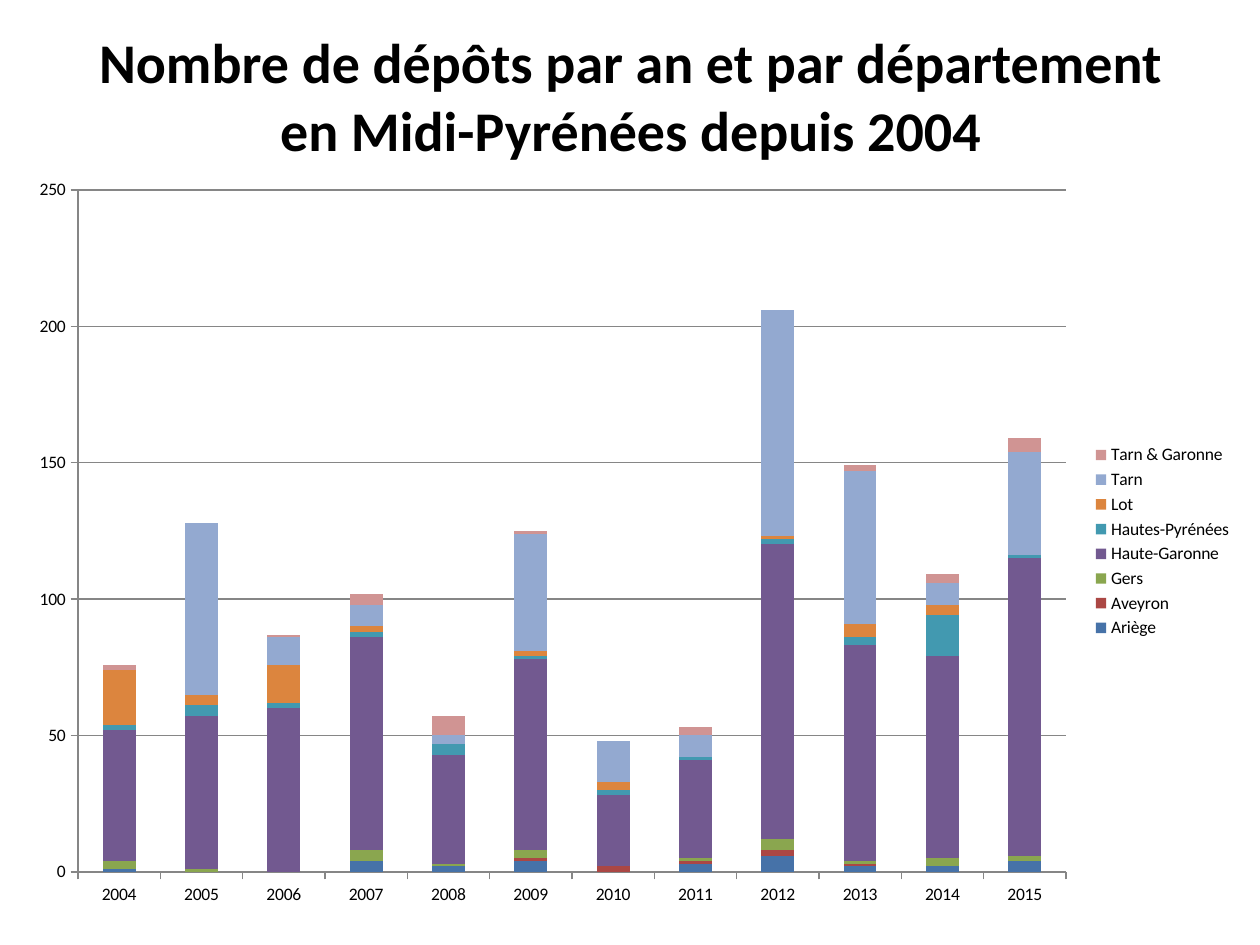
from dataclasses import dataclass

from lxml.etree import SubElement
from pptx import Presentation
from pptx.chart.axis import _BaseAxis
from pptx.chart.chart import Chart
from pptx.chart.data import CategoryChartData
from pptx.dml.color import RGBColor
from pptx.enum.chart import XL_CHART_TYPE, XL_LEGEND_POSITION, XL_TICK_MARK
from pptx.enum.text import MSO_ANCHOR, PP_ALIGN
from pptx.oxml.ns import qn
from pptx.slide import Slide
from pptx.util import Emu, Pt

PX_PER_INCH = 126
FONT = "Calibri"
BLACK = RGBColor(0x00, 0x00, 0x00)
GREY = RGBColor(0x86, 0x86, 0x86)
BLUE = RGBColor(0x46, 0x72, 0xA8)
RED = RGBColor(0xAB, 0x47, 0x44)
GREEN = RGBColor(0x8A, 0xA6, 0x4F)
PURPLE = RGBColor(0x72, 0x59, 0x90)
TEAL = RGBColor(0x42, 0x99, 0xB0)
ORANGE = RGBColor(0xDC, 0x85, 0x3E)
PALE_BLUE = RGBColor(0x93, 0xA9, 0xD0)
PALE_RED = RGBColor(0xD0, 0x94, 0x93)


@dataclass(frozen=True)
class Area:
    left: int
    top: int
    width: int
    height: int

    def emu(self) -> tuple[Emu, ...]:
        return tuple(px(n) for n in (self.left, self.top, self.width, self.height))


@dataclass(frozen=True)
class Department:
    name: str
    deposits: tuple[int, ...]
    color: RGBColor


TITLE_AREA = Area(64, 16, 1134, 158)
CHART_AREA = Area(15, 165, 1230, 753)
PLOT_AREA = Area(78, 190, 988, 682)
YEARS = range(2004, 2016)
DEPARTMENTS = (
    Department("Ariège", (1, 0, 0, 4, 2, 4, 0, 3, 6, 2, 2, 4), BLUE),
    Department("Aveyron", (0, 0, 0, 0, 0, 1, 2, 1, 2, 1, 0, 0), RED),
    Department("Gers", (3, 1, 0, 4, 1, 3, 0, 1, 4, 1, 3, 2), GREEN),
    Department("Haute-Garonne", (48, 56, 60, 78, 40, 70, 26, 36, 108, 79, 74, 109), PURPLE),
    Department("Hautes-Pyrénées", (2, 4, 2, 2, 4, 1, 2, 1, 2, 3, 15, 1), TEAL),
    Department("Lot", (20, 4, 14, 2, 0, 2, 3, 0, 1, 5, 4, 0), ORANGE),
    Department("Tarn", (0, 63, 10, 8, 3, 43, 15, 8, 83, 56, 8, 38), PALE_BLUE),
    Department("Tarn & Garonne", (2, 0, 1, 4, 7, 1, 0, 3, 0, 2, 3, 5), PALE_RED),
)


def px(length: int) -> Emu:
    return Emu(round(length * 914400 / PX_PER_INCH))


def add_title(page: Slide, text: str) -> None:
    box = page.shapes.title
    box.left, box.top, box.width, box.height = TITLE_AREA.emu()
    frame = box.text_frame
    frame.word_wrap = True
    frame.vertical_anchor = MSO_ANCHOR.MIDDLE
    para = frame.paragraphs[0]
    para.alignment = PP_ALIGN.CENTER
    span = para.add_run()
    span.text = text
    span.font.name = FONT
    span.font.size = Pt(32)
    span.font.bold = True
    span.font.color.rgb = BLACK


def style_axis(axis: _BaseAxis) -> None:
    axis.major_tick_mark = XL_TICK_MARK.OUTSIDE
    axis.minor_tick_mark = XL_TICK_MARK.NONE
    axis.format.line.color.rgb = GREY
    axis.format.line.width = Pt(0.75)


def place_plot(chart: Chart) -> None:
    """Fix the inner plot area as fractions of the chart."""
    plot_area = chart._chartSpace.chart.plotArea
    for old in plot_area.findall(qn("c:layout")):
        plot_area.remove(old)
    layout = SubElement(plot_area, qn("c:layout"))
    plot_area.insert(0, layout)
    manual = SubElement(layout, qn("c:manualLayout"))
    settings = {
        "layoutTarget": "inner",
        "xMode": "edge",
        "yMode": "edge",
        "x": (PLOT_AREA.left - CHART_AREA.left) / CHART_AREA.width,
        "y": (PLOT_AREA.top - CHART_AREA.top) / CHART_AREA.height,
        "w": PLOT_AREA.width / CHART_AREA.width,
        "h": PLOT_AREA.height / CHART_AREA.height,
    }
    for name, value in settings.items():
        SubElement(manual, qn(f"c:{name}")).set("val", str(value))


def add_deposit_chart(page: Slide) -> None:
    data = CategoryChartData()
    data.categories = [str(year) for year in YEARS]
    for department in DEPARTMENTS:
        data.add_series(department.name, department.deposits)
    chart = page.shapes.add_chart(
        XL_CHART_TYPE.COLUMN_STACKED, *CHART_AREA.emu(), data
    ).chart
    chart.has_title = False
    chart.font.name = FONT
    chart.font.size = Pt(10)
    chart.font.color.rgb = BLACK

    # Stacked columns
    plot = chart.plots[0]
    plot.gap_width = 150
    plot.overlap = 100
    plot.vary_by_categories = False
    for series, department in zip(plot.series, DEPARTMENTS):
        series.format.fill.solid()
        series.format.fill.fore_color.rgb = department.color

    # Axes and gridlines
    style_axis(chart.category_axis)
    values = chart.value_axis
    style_axis(values)
    values.minimum_scale = 0
    values.maximum_scale = 250
    values.major_unit = 50
    values.has_major_gridlines = True
    values.major_gridlines.format.line.color.rgb = GREY
    values.major_gridlines.format.line.width = Pt(0.75)

    # Legend
    chart.has_legend = True
    chart.legend.position = XL_LEGEND_POSITION.RIGHT
    chart.legend.include_in_layout = False
    place_plot(chart)


def main() -> None:
    deck = Presentation()
    deck.slide_width, deck.slide_height = px(1260), px(945)
    page = deck.slides.add_slide(deck.slide_layouts[5])
    add_title(page, "Nombre de dépôts par an et par département en Midi-Pyrénées depuis 2004")
    add_deposit_chart(page)
    deck.save("out.pptx")


if __name__ == "__main__":
    main()
